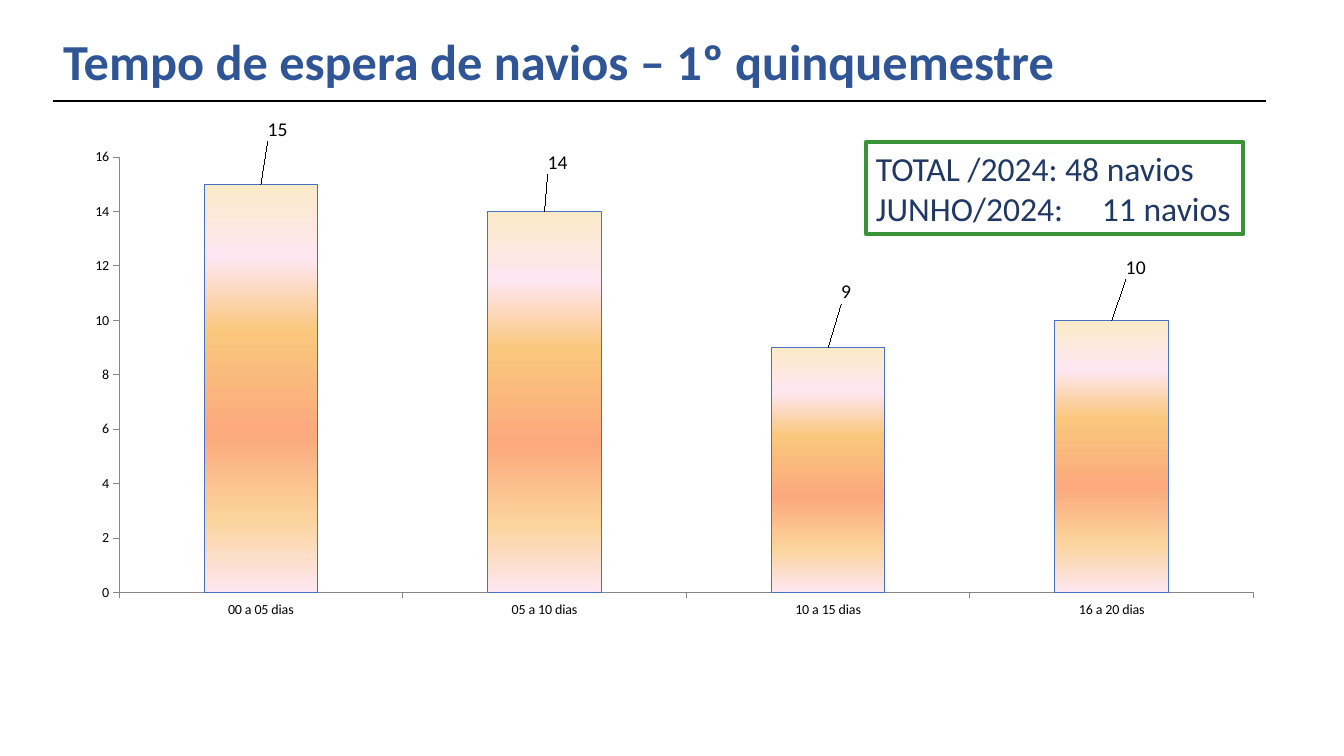
from collections import namedtuple
from dataclasses import dataclass

from lxml.etree import SubElement
from pptx import Presentation
from pptx.chart.data import CategoryChartData
from pptx.dml.color import RGBColor
from pptx.enum.chart import XL_CHART_TYPE, XL_LABEL_POSITION, XL_TICK_MARK
from pptx.enum.shapes import MSO_CONNECTOR, MSO_SHAPE
from pptx.enum.text import MSO_ANCHOR, MSO_AUTO_SIZE, PP_ALIGN
from pptx.oxml.ns import qn
from pptx.util import Pt

Box = namedtuple("Box", "left top width height")


@dataclass(frozen=True)
class Theme:
    font: str = "Calibri"
    title: str = "2F5597"
    rule: str = "000000"
    totals: str = "203864"
    totals_border: str = "3B9339"
    chart_text: str = "000000"
    axis: str = "868686"
    bar_border: str = "4472C4"
    bar_stops: tuple = ((0, "FBEAC7"), (18, "FEE7F2"), (36, "FAC77D"),
                        (61, "FBA97D"), (82, "FBD49C"), (100, "FEE7F2"))
    title_size: int = 36
    totals_size: int = 24
    label_size: int = 14
    axis_size: int = 10


THEME = Theme()
WAITING = {"00 a 05 dias": 15, "05 a 10 dias": 14, "10 a 15 dias": 9, "16 a 20 dias": 10}
LABEL_SHIFTS = ((17, -39), (13, -33), (18, -40), (24, -37))


def px(length):
    return round(length * 914400 / 100.8)


def rgb(value):
    return RGBColor.from_string(value)


def style_font(font, size, color, bold=False):
    font.name = THEME.font
    font.size = Pt(size)
    font.bold = bold
    font.color.rgb = rgb(color)


def place(shape, box):
    shape.left, shape.top, shape.width, shape.height = map(px, box)


def add_heading(slide, box, rule_width):
    title = slide.shapes.title
    place(title, box)
    frame = title.text_frame
    frame.text = "Tempo de espera de navios – 1º quinquemestre"
    frame.auto_size = MSO_AUTO_SIZE.NONE
    frame.vertical_anchor = MSO_ANCHOR.MIDDLE
    paragraph = frame.paragraphs[0]
    paragraph.alignment = PP_ALIGN.LEFT
    paragraph.line_spacing = 0.9
    style_font(paragraph.font, THEME.title_size, THEME.title, bold=True)

    rule_y = px(box.top + box.height + 1)
    rule = slide.shapes.add_connector(
        MSO_CONNECTOR.STRAIGHT, px(box.left), rule_y, px(box.left + rule_width), rule_y)
    rule.line.color.rgb = rgb(THEME.rule)
    rule.line.width = Pt(1.5)
    SubElement(rule._element.spPr, qn("a:effectLst"))


def add_totals(slide, box):
    totals = slide.shapes.add_shape(MSO_SHAPE.RECTANGLE, *map(px, box))
    totals.shadow.inherit = False
    totals.fill.background()
    totals.line.color.rgb = rgb(THEME.totals_border)
    totals.line.width = Pt(3)
    frame = totals.text_frame
    frame.word_wrap = True
    frame.margin_left, frame.margin_right = px(10), 0
    frame.vertical_anchor = MSO_ANCHOR.MIDDLE
    frame.text = "TOTAL /2024: 48 navios\nJUNHO/2024:\t11 navios"
    for paragraph in frame.paragraphs:
        paragraph.alignment = PP_ALIGN.LEFT
        tabs = SubElement(paragraph._p.get_or_add_pPr(), qn("a:tabLst"))
        SubElement(tabs, qn("a:tab"), pos=str(px(226)), algn="l")
        style_font(paragraph.font, THEME.totals_size, THEME.totals)


def make_layout(**settings):
    def build(parent, position):
        layout = SubElement(parent, qn("c:layout"))
        manual = SubElement(layout, qn("c:manualLayout"))
        for tag, value in settings.items():
            SubElement(manual, qn(f"c:{tag}"), val=str(value))
        parent.insert(position, layout)
    return build


def fill_bars(chart, series):
    series.format.fill.gradient()
    series.format.fill.gradient_angle = 270
    series.format.line.color.rgb = rgb(THEME.bar_border)
    series.format.line.width = Pt(0.75)
    stops = chart.element.xpath(".//a:gsLst")[0]
    for stop in list(stops):
        stops.remove(stop)
    for percent, color in THEME.bar_stops:
        stop = SubElement(stops, qn("a:gs"), pos=str(percent * 1000))
        SubElement(stop, qn("a:srgbClr"), val=color)


def label_bars(chart, series, box):
    series.data_labels.show_value = True
    style_font(series.data_labels.font, THEME.label_size, THEME.chart_text)
    for index, (dx, dy) in enumerate(LABEL_SHIFTS):
        label = series.points[index].data_label
        label.position = XL_LABEL_POSITION.OUTSIDE_END
        style_font(label.font, THEME.label_size, THEME.chart_text)
        element = chart.element.xpath(".//c:dLbl")[index]
        make_layout(x=round(dx / box.width, 3), y=round(dy / box.height, 3))(element, 1)


def add_waiting_chart(slide, box, plot_box):
    data = CategoryChartData()
    data.categories = list(WAITING)
    data.add_series("Series 1", list(WAITING.values()))
    chart = slide.shapes.add_chart(
        XL_CHART_TYPE.COLUMN_CLUSTERED, *map(px, box), data).chart
    chart.has_legend = False
    chart.has_title = False
    style_font(chart.font, THEME.axis_size, THEME.chart_text)

    for axis in (chart.category_axis, chart.value_axis):
        axis.has_major_gridlines = False
        axis.major_tick_mark = XL_TICK_MARK.OUTSIDE
        axis.minor_tick_mark = XL_TICK_MARK.NONE
        axis.format.line.color.rgb = rgb(THEME.axis)
        axis.format.line.width = Pt(0.75)
    chart.value_axis.minimum_scale = 0
    chart.value_axis.maximum_scale = 16
    chart.value_axis.major_unit = 2

    plot = chart.plots[0]
    plot.gap_width = 150
    plot.vary_by_categories = False
    series = plot.series[0]
    fill_bars(chart, series)
    label_bars(chart, series, box)

    area = chart.element.xpath(".//c:plotArea")[0]
    for layout in area.findall(qn("c:layout")):
        area.remove(layout)
    make_layout(
        layoutTarget="inner", xMode="edge", yMode="edge",
        x=round(plot_box.left / box.width, 3), y=round(plot_box.top / box.height, 3),
        w=round(plot_box.width / box.width, 3),
        h=round(plot_box.height / box.height, 3))(area, 0)


def main():
    deck = Presentation()
    deck.slide_width, deck.slide_height = px(1344), px(756)
    slide = deck.slides.add_slide(deck.slide_layouts.get_by_name("Title Only"))
    add_heading(slide, Box(53, 29, 1029, 71), rule_width=1213)
    add_totals(slide, Box(866, 142, 377, 92))
    add_waiting_chart(slide, Box(72, 118, 1207, 510), Box(47, 35, 1134, 439))
    deck.save("out.pptx")


if __name__ == "__main__":
    main()
